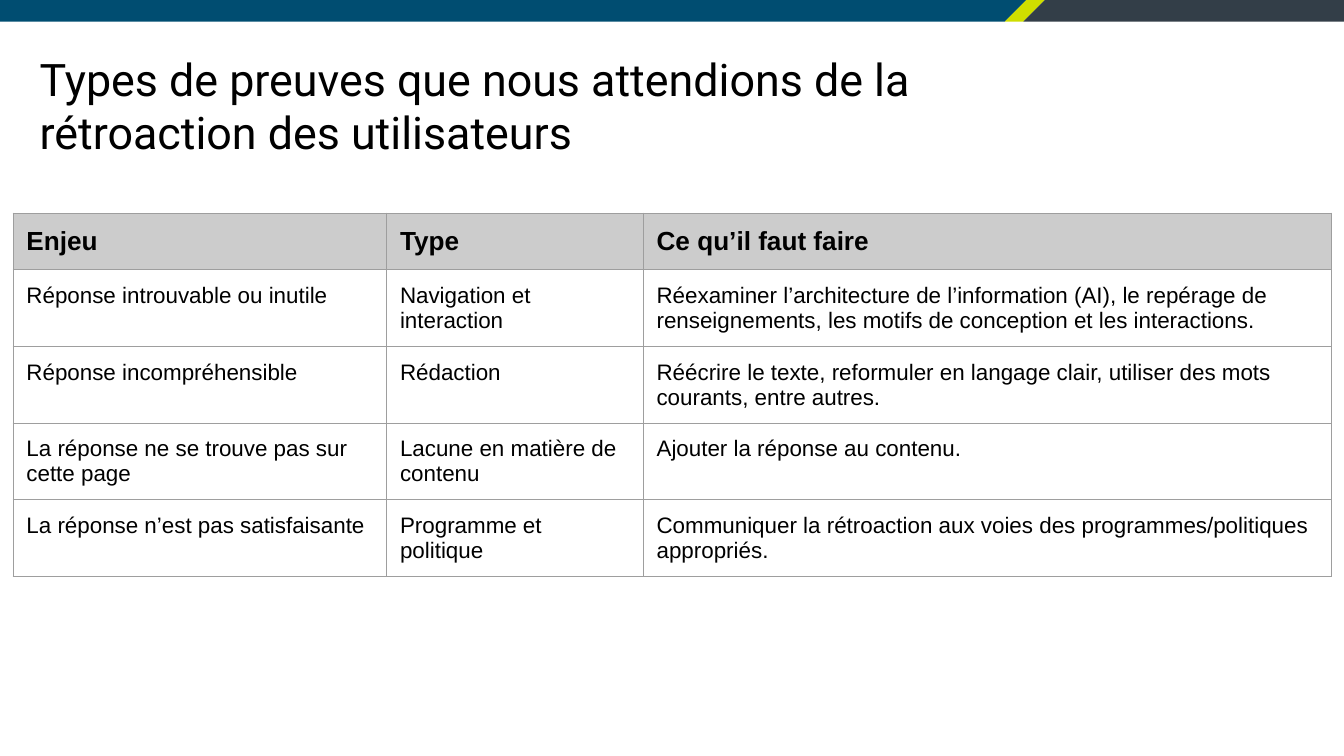
from lxml import etree
from pptx import Presentation
from pptx.dml.color import RGBColor
from pptx.enum.text import MSO_ANCHOR, MSO_AUTO_SIZE, PP_ALIGN
from pptx.oxml.ns import qn
from pptx.util import Cm, Pt

TOP = MSO_ANCHOR.TOP
LEFT = PP_ALIGN.LEFT
FIXED = MSO_AUTO_SIZE.NONE
TITLE_ONLY = 5
PAD = Cm(0.25)

COLORS = {
    "blue": "004D71",
    "lime": "CFDE00",
    "slate": "333E48",
    "head": "CCCCCC",
    "rule": "9E9E9E",
    "text": "000000",
}

TITLE = "Types de preuves que nous attendions de la rétroaction des utilisateurs"
WIDTHS = (7.06, 4.85, 13)
ROWS = (
    ("Enjeu", "Type", "Ce qu’il faut faire"),
    ("Réponse introuvable ou inutile", "Navigation et interaction",
     "Réexaminer l’architecture de l’information (AI), le repérage de "
     "renseignements, les motifs de conception et les interactions."),
    ("Réponse incompréhensible", "Rédaction",
     "Réécrire le texte, reformuler en langage clair, utiliser des mots "
     "courants, entre autres."),
    ("La réponse ne se trouve pas sur cette page", "Lacune en matière de contenu",
     "Ajouter la réponse au contenu."),
    ("La réponse n’est pas satisfaisante", "Programme et politique",
     "Communiquer la rétroaction aux voies des programmes/politiques appropriés."),
)


def color(name):
    """Return the named colour."""
    return RGBColor.from_string(COLORS[name])


def style(frame, font, size, bold=False):
    """Format every run of a text frame."""
    for para in frame.paragraphs:
        para.alignment = LEFT
        for run in para.runs:
            run.font.name = font
            run.font.size = Pt(size)
            run.font.bold = bold
            run.font.color.rgb = color("text")


def add_band(slide, left, top, width, height):
    """Draw the band as three parts that meet on slanted edges."""
    right = left + width
    edges = (left, left + Cm(19.4), left + Cm(19.75), right)
    for name, start, end in zip(("blue", "lime", "slate"), edges, edges[1:]):
        low = start if start == left else start - height
        far = end if end == right else end - height
        pen = slide.shapes.build_freeform(start, top)
        pen.add_line_segments(
            ((end, top), (far, top + height), (low, top + height)), close=True)
        part = pen.convert_to_shape()
        part.shadow.inherit = False
        part.fill.solid()
        part.fill.fore_color.rgb = color(name)
        part.line.fill.background()


def add_title(slide, left, top, width, height):
    """Place and format the title."""
    title = slide.shapes.title
    title.left, title.top, title.width, title.height = left, top, width, height
    frame = title.text_frame
    frame.text = TITLE
    frame.word_wrap = True
    frame.auto_size = FIXED
    frame.vertical_anchor = TOP
    frame.margin_left = frame.margin_right = PAD
    frame.margin_top = frame.margin_bottom = PAD
    style(frame, "Roboto", 24)


def add_rules(cell):
    """Give a cell a thin line on each side."""
    props = cell._tc.get_or_add_tcPr()
    for side in ("lnL", "lnR", "lnT", "lnB"):
        line = etree.SubElement(props, qn(f"a:{side}"), w=str(Pt(0.75)))
        fill = etree.SubElement(line, qn("a:solidFill"))
        etree.SubElement(fill, qn("a:srgbClr"), val=COLORS["rule"])


def fill_cell(cell, text, head):
    """Write and format one cell."""
    cell.text = text
    cell.vertical_anchor = TOP
    cell.margin_left = cell.margin_right = PAD
    cell.margin_top = cell.margin_bottom = PAD
    add_rules(cell)
    if head:
        cell.fill.solid()
        cell.fill.fore_color.rgb = color("head")
    else:
        cell.fill.background()
    style(cell.text_frame, "Arial", 14 if head else 12, head)


def add_grid(slide, left, top, width, height):
    """Build the table of issues, types and actions."""
    frame = slide.shapes.add_table(
        len(ROWS), len(WIDTHS), left, top, width, height)
    table = frame.table
    table.first_row = table.horz_banding = False
    for col, size in zip(table.columns, WIDTHS):
        col.width = Cm(size)
    for i, (row, texts) in enumerate(zip(table.rows, ROWS)):
        row.height = Cm(1.07)
        for cell, text in zip(row.cells, texts):
            fill_cell(cell, text, i == 0)
    frame.height = height


def main():
    """Build and save the slide."""
    deck = Presentation()
    deck.slide_width, deck.slide_height = Cm(25.4), Cm(14.29)
    slide = deck.slides.add_slide(deck.slide_layouts[TITLE_ONLY])
    add_band(slide, 0, 0, deck.slide_width, Cm(0.41))
    add_title(slide, Cm(0.5), Cm(0.72), Cm(20.65), Cm(1.6))
    add_grid(slide, Cm(0.25), Cm(4.03), Cm(sum(WIDTHS)), Cm(7.19))
    deck.save("out.pptx")


if __name__ == "__main__":
    main()
